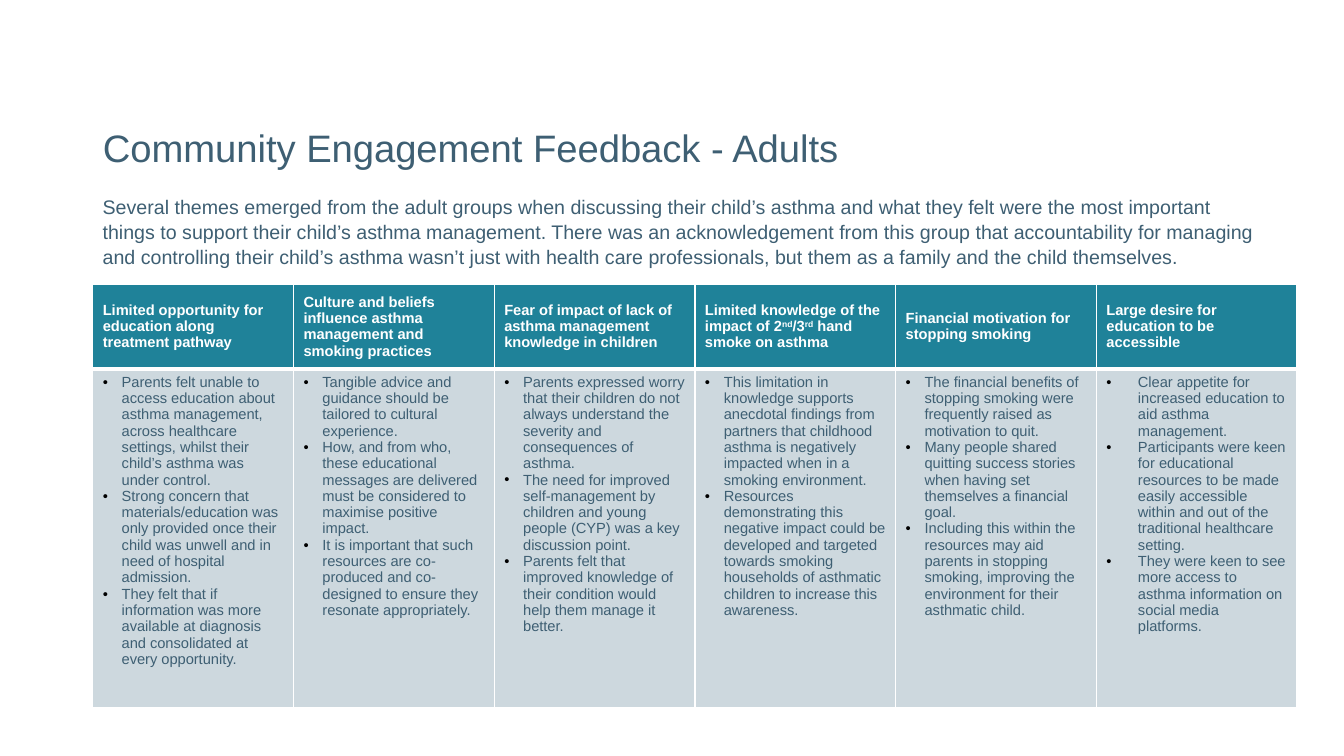
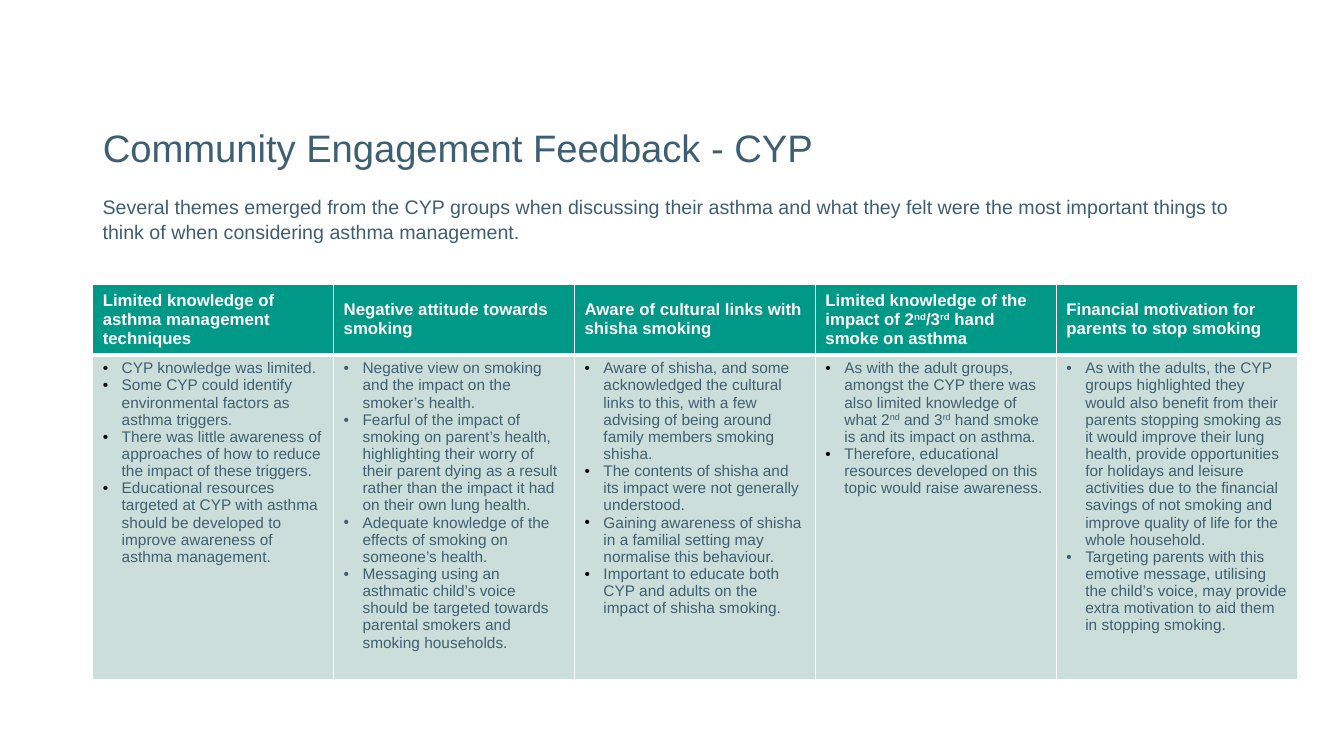
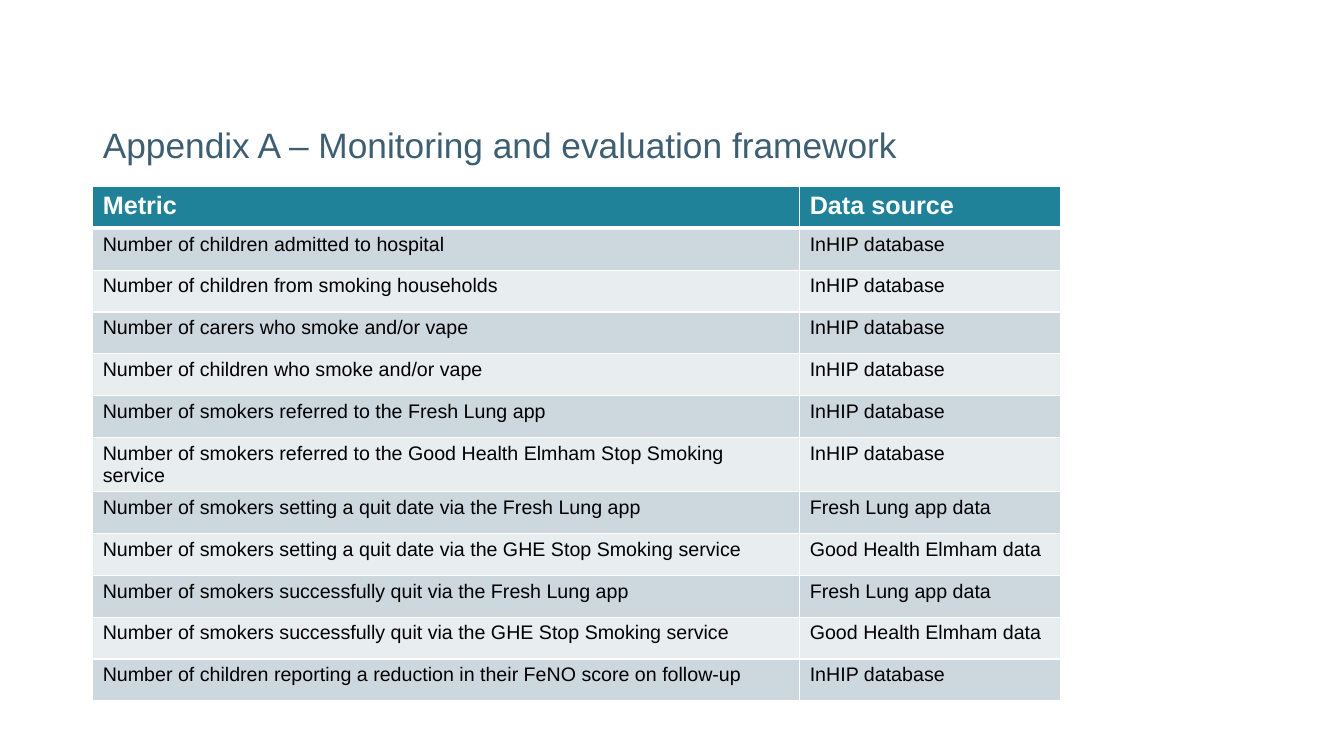
from lxml import etree
from pptx import Presentation
from pptx.dml.color import RGBColor
from pptx.enum.text import MSO_ANCHOR, MSO_AUTO_SIZE, PP_ALIGN
from pptx.oxml.ns import qn
from pptx.util import Pt

MIDDLE, TOP = MSO_ANCHOR.MIDDLE, MSO_ANCHOR.TOP
LEFT = PP_ALIGN.LEFT
FIXED = MSO_AUTO_SIZE.NONE

# Shared style
FONT = "Arial"
SLATE, WHITE, BLACK = "3E5F73", "FFFFFF", "000000"
TEAL, GREEN = "1F8299", "009987"
MIST, PALE, SAGE = "CDD8DE", "E8EDEF", "CCDED9"
EDGE = 66.24
TITLE_ONLY = 5


def rgb(code):
    return RGBColor.from_string(code)


def paint(node, code):
    """Add a solid fill to an XML node."""
    fill = etree.SubElement(node, qn("a:solidFill"))
    etree.SubElement(fill, qn("a:srgbClr")).set("val", code)


class Deck:
    def __init__(self):
        self.file = Presentation()
        self.file.slide_width, self.file.slide_height = Pt(960), Pt(540)
        self.slide = None

    def text(self, para, words, size, color, bold=False):
        """Add text run by run; parts between ^ marks are raised."""
        para.alignment = LEFT
        for i, part in enumerate(words.split("^")):
            run = para.add_run()
            run.text = part
            font = run.font
            font.name, font.size, font.bold = FONT, Pt(size), bold
            font.color.rgb = rgb(color)
            if i % 2:
                run._r.get_or_add_rPr().set("baseline", "30000")

    def bullet(self, para, dot, gap):
        props = para._p.get_or_add_pPr()
        props.set("marL", str(Pt(gap)))
        props.set("indent", str(-Pt(gap)))
        tint = etree.SubElement(props, qn("a:buClr"))
        etree.SubElement(tint, qn("a:srgbClr")).set("val", dot)
        etree.SubElement(props, qn("a:buFont")).set("typeface", FONT)
        etree.SubElement(props, qn("a:buChar")).set("char", "•")

    def title(self, words, top=90, size=27.3, lead=0.8):
        """Start a slide with its title."""
        layout = self.file.slide_layouts[TITLE_ONLY]
        self.slide = self.file.slides.add_slide(layout)
        box = self.slide.shapes.title
        box.left, box.top = Pt(EDGE), Pt(top)
        box.width, box.height = Pt(828), Pt(36)
        frame = box.text_frame
        frame.auto_size, frame.word_wrap = FIXED, True
        frame.vertical_anchor = MIDDLE
        para = frame.paragraphs[0]
        para.line_spacing = lead
        self.text(para, words, size, SLATE)

    def intro(self, words, height):
        box = self.slide.shapes.add_textbox(
            Pt(EDGE), Pt(134.64), Pt(844.56), Pt(height))
        box.text_frame.word_wrap = True
        para = box.text_frame.paragraphs[0]
        para.line_spacing, para.space_after = 1.07, Pt(8)
        self.text(para, words, 14, SLATE)

    def cell(self, cell, fill, anchor=TOP, top=1, base=1):
        """Rule and fill a cell, and return its text frame."""
        props = cell._tc.get_or_add_tcPr()
        for side, width in zip("LRTB", (1, 1, top, base)):
            line = etree.SubElement(props, qn("a:ln" + side))
            line.set("w", str(Pt(width)))
            paint(line, WHITE)
        cell.fill.solid()
        cell.fill.fore_color.rgb = rgb(fill)
        cell.vertical_anchor = anchor
        return cell.text_frame

    def grid(self, top, widths, heights):
        table = self.slide.shapes.add_table(
            len(heights), len(widths), Pt(EDGE), Pt(top),
            Pt(sum(widths)), Pt(sum(heights))).table
        table.horz_banding = False
        for col, width in zip(table.columns, widths):
            col.width = Pt(width)
        for row, height in zip(table.rows, heights):
            row.height = Pt(height)
        return table

    def head(self, cell, words, fill, size, anchor):
        frame = self.cell(cell, fill, anchor, base=3)
        self.text(frame.paragraphs[0], words, size, WHITE, True)

    def themes(self, cols, heights, fills, sizes):
        """Table with one theme a column: heading above bullets."""
        table = self.grid(203, [860.4 / len(cols)] * len(cols), heights)
        for i, (name, dot, gap, points) in enumerate(cols):
            self.head(table.cell(0, i), name, fills[0], sizes[0], MIDDLE)
            frame = self.cell(table.cell(1, i), fills[1], top=3)
            for j, point in enumerate(points):
                para = frame.add_paragraph() if j else frame.paragraphs[0]
                self.bullet(para, dot, gap)
                self.text(para, point, sizes[1], SLATE)

    def metrics(self, names, rows):
        """Banded table of metrics and their sources."""
        count = len(rows) + 1
        table = self.grid(133.2, [505, 186], [29.9] * count)
        for i, name in enumerate(names):
            self.head(table.cell(0, i), name, TEAL, 18, TOP)
        for j, row in enumerate(rows, 1):
            for i, words in enumerate(row):
                frame = self.cell(table.cell(j, i), MIST if j % 2 else PALE,
                                  top=3 if j == 1 else 1)
                self.text(frame.paragraphs[0], words, 14, BLACK)


# Content: heading, bullet colour, indent, points
SMOKE = "Limited knowledge of the impact of 2^nd^/3^rd^ hand smoke on asthma"
ADULTS = [
    ("Limited opportunity for education along treatment pathway", BLACK, 13.5, [
        "Parents felt unable to access education about asthma management, "
        "across healthcare settings, whilst their child’s asthma was under control.",
        "Strong concern that materials/education was only provided once their "
        "child was unwell and in need of hospital admission.",
        "They felt that if information was more available at diagnosis and "
        "consolidated at every opportunity."]),
    ("Culture and beliefs influence asthma management and smoking practices",
     BLACK, 13.5, [
        "Tangible advice and guidance should be tailored to cultural experience.",
        "How, and from who, these educational messages are delivered must be "
        "considered to maximise positive impact.",
        "It is important that such resources are co-produced and co-designed "
        "to ensure they resonate appropriately."]),
    ("Fear of impact of lack of asthma management knowledge in children",
     BLACK, 13.5, [
        "Parents expressed worry that their children do not always understand "
        "the severity and consequences of asthma.",
        "The need for improved self-management by children and young people "
        "(CYP) was a key discussion point.",
        "Parents felt that improved knowledge of their condition would help "
        "them manage it better."]),
    (SMOKE, BLACK, 13.5, [
        "This limitation in knowledge supports anecdotal findings from partners "
        "that childhood asthma is negatively impacted when in a smoking "
        "environment.",
        "Resources demonstrating this negative impact could be developed and "
        "targeted towards smoking households of asthmatic children to increase "
        "this awareness."]),
    ("Financial motivation for stopping smoking", BLACK, 13.5, [
        "The financial benefits of stopping smoking were frequently raised as "
        "motivation to quit.",
        "Many people shared quitting success stories when having set themselves "
        "a financial goal.",
        "Including this within the resources may aid parents in stopping "
        "smoking, improving the environment for their asthmatic child."]),
    ("Large desire for education to be accessible", BLACK, 22.5, [
        "Clear appetite for increased education to aid asthma management.",
        "Participants were keen for educational resources to be made easily "
        "accessible within and out of the traditional healthcare setting.",
        "They were keen to see more access to asthma information on social "
        "media platforms."]),
]
YOUNG = [
    ("Limited knowledge of asthma management techniques", BLACK, 13.5, [
        "CYP knowledge was limited.",
        "Some CYP could identify environmental factors as asthma triggers.",
        "There was little awareness of approaches of how to reduce the impact "
        "of these triggers.",
        "Educational resources targeted at CYP with asthma should be developed "
        "to improve awareness of asthma management."]),
    ("Negative attitude towards smoking", SLATE, 13.5, [
        "Negative view on smoking and the impact on the smoker’s health.",
        "Fearful of the impact of smoking on parent’s health, highlighting "
        "their worry of their parent dying as a result rather than the impact "
        "it had on their own lung health.",
        "Adequate knowledge of the effects of smoking on someone’s health.",
        "Messaging using an asthmatic child’s voice should be targeted towards "
        "parental smokers and smoking households."]),
    ("Aware of cultural links with shisha smoking", BLACK, 13.5, [
        "Aware of shisha, and some acknowledged the cultural links to this, "
        "with a few advising of being around family members smoking shisha.",
        "The contents of shisha and its impact were not generally understood.",
        "Gaining awareness of shisha in a familial setting may normalise this "
        "behaviour.",
        "Important to educate both CYP and adults on the impact of shisha "
        "smoking."]),
    (SMOKE, BLACK, 13.5, [
        "As with the adult groups, amongst the CYP there was also limited "
        "knowledge of what 2^nd^ and 3^rd^ hand smoke is and its impact on "
        "asthma.",
        "Therefore, educational resources developed on this topic would raise "
        "awareness."]),
    ("Financial motivation for parents to stop smoking", SLATE, 13.5, [
        "As with the adults, the CYP groups highlighted they would also benefit "
        "from their parents stopping smoking as it would improve their lung "
        "health, provide opportunities for holidays and leisure activities due "
        "to the financial savings of not smoking and improve quality of life "
        "for the whole household.",
        "Targeting parents with this emotive message, utilising the child’s "
        "voice, may provide extra motivation to aid them in stopping smoking."]),
]
BASE, APP, CARE = "InHIP database", "Fresh Lung app", "Good Health Elmham"
METRICS = [
    ("Number of children admitted to hospital", BASE),
    ("Number of children from smoking households", BASE),
    ("Number of carers who smoke and/or vape", BASE),
    ("Number of children who smoke and/or vape", BASE),
    (f"Number of smokers referred to the {APP}", BASE),
    (f"Number of smokers referred to the {CARE} Stop Smoking service", BASE),
    (f"Number of smokers setting a quit date via the {APP}", f"{APP} data"),
    ("Number of smokers setting a quit date via the GHE Stop Smoking service",
     f"{CARE} data"),
    (f"Number of smokers successfully quit via the {APP}", f"{APP} data"),
    ("Number of smokers successfully quit via the GHE Stop Smoking service",
     f"{CARE} data"),
    ("Number of children reporting a reduction in their FeNO score on follow-up",
     BASE),
]


def main():
    deck = Deck()

    # Adults
    deck.title("Community Engagement Feedback - Adults")
    deck.intro(
        "Several themes emerged from the adult groups when discussing their "
        "child’s asthma and what they felt were the most important things to "
        "support their child’s asthma management. There was an acknowledgement "
        "from this group that accountability for managing and controlling their "
        "child’s asthma wasn’t just with health care professionals, but them as "
        "a family and the child themselves.", 60.5)
    deck.themes(ADULTS, (60.5, 242), (TEAL, MIST), (10.5, 10.5))

    # Children and young people
    deck.title("Community Engagement Feedback - CYP")
    deck.intro(
        "Several themes emerged from the CYP groups when discussing their asthma "
        "and what they felt were the most important things to think of when "
        "considering asthma management.", 42.5)
    deck.themes(YOUNG, (50, 232), (GREEN, SAGE), (12, 11))

    # Appendix
    deck.title("Appendix A – Monitoring and evaluation framework", 87, 25.2, 0.9)
    deck.metrics(("Metric", "Data source"), METRICS)

    deck.file.save("out.pptx")


if __name__ == "__main__":
    main()
